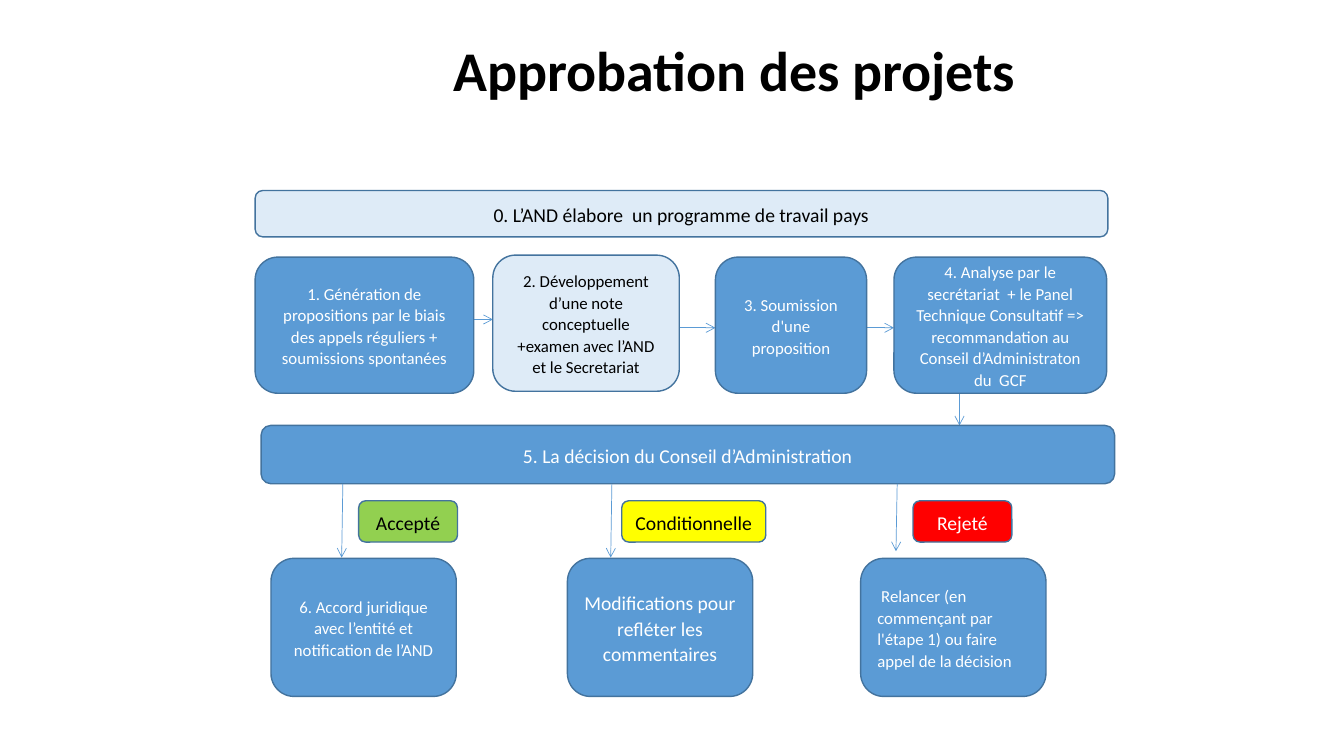
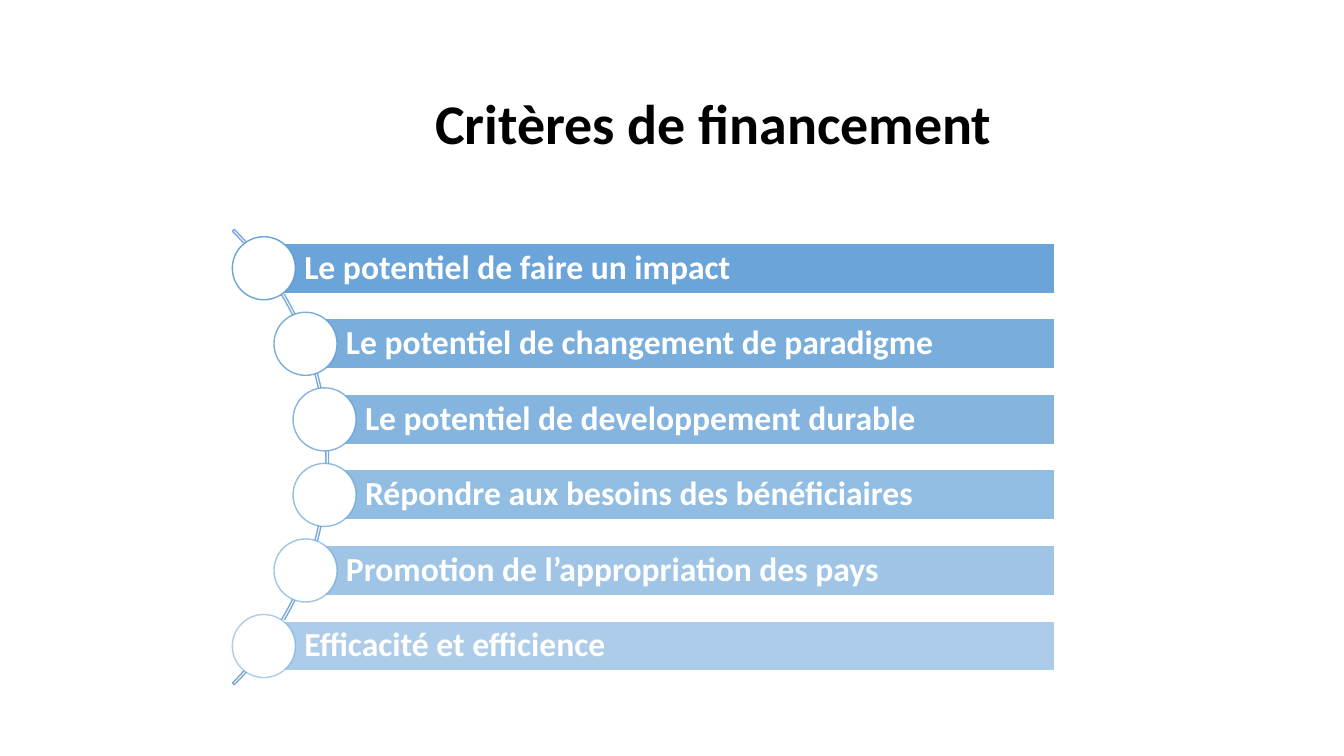
import pptx
import pptx.util
import pptx.dml.color
import pptx.enum.shapes
import pptx.enum.text
import pptx.oxml
import pptx.oxml.ns

Cm, Pt = pptx.util.Cm, pptx.util.Pt
SHAPE = pptx.enum.shapes.MSO_SHAPE
ALIGN = pptx.enum.text.PP_ALIGN

FONT = "Calibri"
BLUE, PALE, EDGE, ARC = "5B9BD5", "DEEBF7", "43739E", "7AA9DA"
GREEN, YELLOW, RED = "92D050", "FFFF00", "FF0000"
BLACK, WHITE = "000000", "FFFFFF"

FLOW_TITLE = "Approbation des projets"
PROGRAMME = ("0. L’AND élabore  un programme de travail pays", (6.43, 4.8, 21.49, 1.17))
DECISION = ("5. La décision du Conseil d’Administration", (6.58, 10.72, 21.51, 1.47))
STEP_TOP, STEP_HEIGHT = 6.48, 3.43
STEPS = [
    {"text": "1. Génération de propositions par le biais des appels réguliers + "
             "soumissions spontanées", "left": 6.43, "width": 5.51, "arrow_y": 8.05},
    {"text": "2. Développement d’une note conceptuelle +examen avec l’AND et le Secretariat",
     "left": 12.42, "width": 4.7, "arrow_y": 8.26, "top": 6.43, "fill": PALE, "color": BLACK},
    {"text": "3. Soumission d'une proposition", "left": 18.03, "width": 3.81, "arrow_y": 8.26},
    {"text": "4. Analyse par le secrétariat  + le Panel Technique Consultatif => "
             "recommandation au Conseil d’Administraton du  GCF", "left": 22.53, "width": 5.36},
]
DECISION_ARROW_X = 24.18
TAG_TOP, TAG_HEIGHT = 12.62, 1.04
OUTCOME_TOP, OUTCOME_WIDTH, OUTCOME_HEIGHT = 14.07, 4.67, 3.48
OUTCOMES = [
    {"tag": "Accepté", "tag_left": 9.04, "tag_width": 2.49, "tag_fill": GREEN,
     "tag_color": BLACK, "left": 6.83, "arrow": (8.64, 14.05),
     "text": "6. Accord juridique avec l’entité et notification de l’AND", "format": {}},
    {"tag": "Conditionnelle", "tag_left": 15.67, "tag_width": 3.63, "tag_fill": YELLOW,
     "tag_color": BLACK, "left": 14.3, "arrow": (15.42, 14.05),
     "text": "Modifications pour refléter les commentaires", "format": {"size": 14}},
    {"tag": "Rejeté", "tag_left": 23.01, "tag_width": 2.49, "tag_fill": RED,
     "tag_color": WHITE, "left": 21.69, "arrow": (22.61, 13.89),
     "text": "Relancer (en commençant par l'étape 1) ou faire appel de la décision",
     "format": {"align": ALIGN.LEFT, "indent": 0.1}},
]

CRITERIA_TITLE = "Critères de financement"
CRITERIA = [
    ("Le potentiel de faire un impact", 6.65),
    ("Le potentiel de changement de paradigme", 7.7),
    ("Le potentiel de developpement durable", 8.18),
    ("Répondre aux besoins des bénéficiaires", 8.18),
    ("Promotion de l’appropriation des pays", 7.7),
    ("Efficacité et efficience", 6.65),
]
FIRST_Y, LAST_Y, BAR_RIGHT = 6.76, 16.28, 26.57
BAR_HEIGHT, CIRCLE, ARC_LEFT, ARC_SIZE = 1.27, 1.59, -7.95, 16.23


def rgb(value):
    """Return a colour from a hex string."""
    return pptx.dml.color.RGBColor.from_string(value)


def set_alpha(fill, percent):
    """Give a solid fill an opacity in percent."""
    alpha = pptx.oxml.parse_xml(
        f'<a:alpha {pptx.oxml.ns.nsdecls("a")} val="{percent * 1000}"/>')
    fill._xPr.find(".//" + pptx.oxml.ns.qn("a:srgbClr")).append(alpha)


def write(sp, text, size=12, color=WHITE, bold=False, align=ALIGN.CENTER,
          spacing=1.07, indent=0, insets=(0.25, 0.13, 0.25, 0.13)):
    """Write one formatted paragraph into a shape."""
    tf = sp.text_frame
    tf.word_wrap = True
    tf.vertical_anchor = pptx.enum.text.MSO_ANCHOR.MIDDLE
    tf.margin_left, tf.margin_top, tf.margin_right, tf.margin_bottom = map(Cm, insets)
    p = tf.paragraphs[0]
    p.alignment, p.line_spacing = align, spacing
    if indent:
        p._p.get_or_add_pPr().set("indent", str(Cm(indent)))
    r = p.add_run()
    r.text = text
    r.font.name, r.font.size, r.font.bold = FONT, Pt(size), bold
    r.font.color.rgb = rgb(color)


def add_title(s, text, box, align=ALIGN.CENTER):
    """Add the slide title."""
    write(s.shapes.add_textbox(*map(Cm, box)), text, size=40, color=BLACK,
          bold=True, align=align, spacing=0.9)


def add_shape(s, kind, box, fill=None, line=EDGE):
    """Add a flat preset shape with a one point outline."""
    sp = s.shapes.add_shape(kind, *map(Cm, box))
    sp.shadow.inherit = False
    if fill:
        sp.fill.solid()
        sp.fill.fore_color.rgb = rgb(fill)
    else:
        sp.fill.background()
    sp.line.color.rgb = rgb(line)
    sp.line.width = Pt(1)
    return sp


def add_box(s, text, box, fill=BLUE, **style):
    """Add a rounded flow chart box with text."""
    write(add_shape(s, SHAPE.FLOWCHART_ALTERNATE_PROCESS, box, fill), text, **style)


def add_arrow(s, x1, y1, x2, y2):
    """Add a thin arrow between two points."""
    c = s.shapes.add_connector(pptx.enum.shapes.MSO_CONNECTOR.STRAIGHT,
                               Cm(x1), Cm(y1), Cm(x2), Cm(y2))
    c.line.color.rgb = rgb(BLUE)
    c.line.width = Pt(0.5)
    ns = pptx.oxml.ns.nsdecls("a")
    c.line._get_or_add_ln().append(pptx.oxml.parse_xml(f'<a:tailEnd {ns} type="arrow"/>'))
    c._element.spPr.append(pptx.oxml.parse_xml(f"<a:effectLst {ns}/>"))


def build_flow(s):
    """Draw the project approval flow chart."""
    add_title(s, FLOW_TITLE, (8.03, 0.56, 20.96, 2.59))
    for step, following in zip(STEPS, STEPS[1:]):
        y = step["arrow_y"]
        add_arrow(s, step["left"] + step["width"], y, following["left"], y)
    decision_top = DECISION[1][1]
    decision_bottom = decision_top + DECISION[1][3]
    add_arrow(s, DECISION_ARROW_X, STEP_TOP + STEP_HEIGHT, DECISION_ARROW_X, decision_top)

    add_box(s, *PROGRAMME, fill=PALE, size=14, color=BLACK)
    for step in STEPS:
        box = (step["left"], step.get("top", STEP_TOP), step["width"], STEP_HEIGHT)
        add_box(s, step["text"], box, step.get("fill", BLUE), color=step.get("color", WHITE))
    add_box(s, *DECISION, size=14)

    for o in OUTCOMES:
        x, end = o["arrow"]
        add_arrow(s, x, decision_bottom, x - 0.03, end)
        add_box(s, o["text"], (o["left"], OUTCOME_TOP, OUTCOME_WIDTH, OUTCOME_HEIGHT),
                **o["format"])
        add_box(s, o["tag"], (o["tag_left"], TAG_TOP, o["tag_width"], TAG_HEIGHT),
                o["tag_fill"], size=14, color=o["tag_color"])


def build_criteria(s):
    """Draw the funding criteria along an arc."""
    add_title(s, CRITERIA_TITLE, (10.72, 1.6, 17.91, 3.18), align=ALIGN.LEFT)
    arc_top = (FIRST_Y + LAST_Y - ARC_SIZE) / 2
    arc = add_shape(s, SHAPE.BLOCK_ARC, (ARC_LEFT, arc_top, ARC_SIZE, ARC_SIZE), line=ARC)
    for i, value in enumerate((189, 27, 0.004)):
        arc.adjustments[i] = value

    pitch = (LAST_Y - FIRST_Y) / (len(CRITERIA) - 1)
    for i, (text, x) in enumerate(CRITERIA):
        y, opacity = FIRST_Y + i * pitch, 90 - 8 * i
        bar = add_shape(s, SHAPE.RECTANGLE,
                        (x, y - BAR_HEIGHT / 2, BAR_RIGHT - x, BAR_HEIGHT), BLUE, WHITE)
        set_alpha(bar.fill, opacity)
        write(bar, text, size=24, bold=True, align=ALIGN.LEFT, spacing=0.9,
              insets=(1.02, 0.18, 0.18, 0.18))
        circle = add_shape(s, SHAPE.OVAL,
                           (x - CIRCLE / 2, y - CIRCLE / 2, CIRCLE, CIRCLE), WHITE, BLUE)
        set_alpha(circle.line.fill, opacity)


def main():
    """Build and save the presentation."""
    prs = pptx.Presentation()
    prs.slide_width, prs.slide_height = Cm(33.87), Cm(19.05)
    for build in (build_flow, build_criteria):
        build(prs.slides.add_slide(prs.slide_layouts[6]))
    prs.save("out.pptx")


if __name__ == "__main__":
    main()
